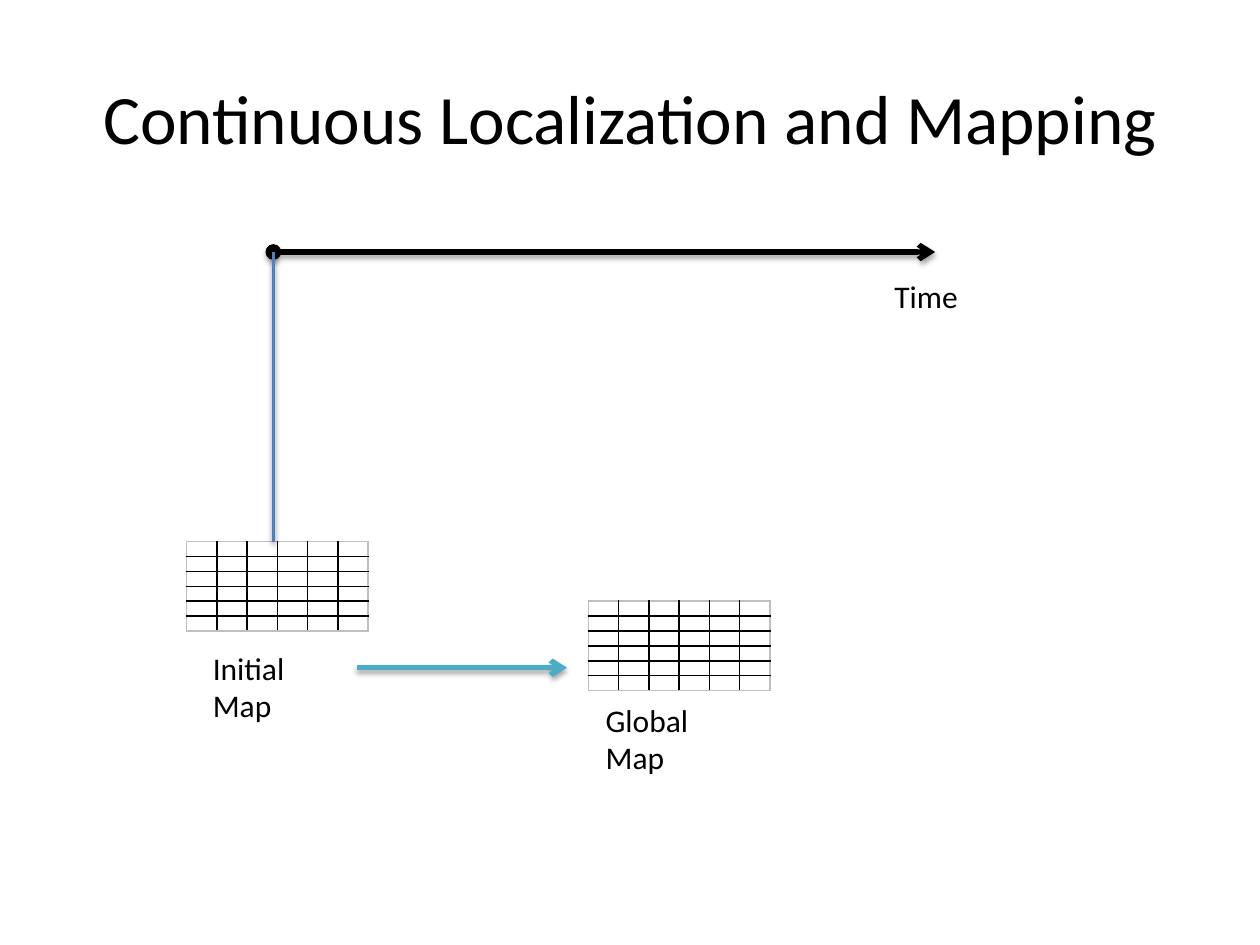
from dataclasses import dataclass
from itertools import product
from lxml.etree import SubElement
from pptx import Presentation
from pptx.dml.color import RGBColor
from pptx.enum.shapes import MSO_CONNECTOR as Connector
from pptx.enum.text import MSO_ANCHOR as Anchor, PP_ALIGN as Align
from pptx.oxml import parse_xml
from pptx.oxml.ns import nsdecls, qn
from pptx.util import Cm, Pt


@dataclass(frozen=True)
class Theme:
    font: str = "Calibri"
    title_size: float = 39.6
    label_size: float = 18
    cell_size: float = 1
    ink: str = "000000"
    grid_edge: str = "BFBFBF"
    blue: str = "4F81BD"
    teal: str = "4BACC6"


THEME = Theme()
TITLE = "Continuous Localization and Mapping"
LABELS = [
    ("Time", 17.78, 5.46, 1.85, False),
    ("Initial Map", 4.04, 12.95, 3.1, True),
    ("Global Map", 11.96, 14, 3.4, True),
]
MAP_GRIDS = [(3.76, 10.92), (11.86, 12.12)]
GRID_COUNT, CELL_WIDTH, CELL_HEIGHT = 6, 0.61, 0.3
TIMELINE = dict(start=(5.51, 5.08), end=(18.85, 5.08), color=THEME.ink,
                width=3, head="oval", tail="arrow")
START_MARK = dict(start=(5.51, 5.08), end=(5.51, 10.92), color=THEME.blue,
                  width=2, blur=3.1, distance=1.6, opacity=38)
MERGE_ARROW = dict(start=(7.19, 13.46), end=(11.43, 13.46), color=THEME.teal,
                   width=3, tail="arrow")


def add_text(slide, text, left, top, width, height, size, wrap=True):
    """Add a one-paragraph text box and return it."""
    shape = slide.shapes.add_textbox(Cm(left), Cm(top), Cm(width), Cm(height))
    shape.text_frame.word_wrap = wrap
    paragraph = shape.text_frame.paragraphs[0]
    paragraph.text = text
    paragraph.font.name = THEME.font
    paragraph.font.size = Pt(size)
    paragraph.font.color.rgb = RGBColor.from_string(THEME.ink)
    return shape


def add_line(slide, start, end, color, width, head=None, tail=None,
             blur=3.1, distance=1.8, opacity=35):
    """Add a straight line with optional ends and a soft shadow below."""
    points = [Cm(value) for value in (*start, *end)]
    connector = slide.shapes.add_connector(Connector.STRAIGHT, *points)
    connector.line.color.rgb = RGBColor.from_string(color)
    connector.line.width = Pt(width)
    outline = connector.line._get_or_add_ln()
    for tag, kind in (("a:headEnd", head), ("a:tailEnd", tail)):
        if kind:
            SubElement(outline, qn(tag), type=kind)
    connector._element.spPr.append(parse_xml(
        f'<a:effectLst {nsdecls("a")}>'
        f'<a:outerShdw blurRad="{Pt(blur)}" dist="{Pt(distance)}" '
        f'dir="5400000" rotWithShape="0"><a:srgbClr val="{THEME.ink}">'
        f'<a:alpha val="{opacity * 1000}"/></a:srgbClr>'
        f'</a:outerShdw></a:effectLst>'))


def set_borders(cell, row, column):
    """Draw black inner rules and a light outer edge."""
    last = GRID_COUNT - 1
    edges = {"a:lnL": column == 0, "a:lnR": column == last,
             "a:lnT": row == 0, "a:lnB": row == last}
    properties = cell._tc.get_or_add_tcPr()
    for tag, outer in edges.items():
        border = SubElement(properties, qn(tag), w=str(Pt(1)))
        fill = SubElement(border, qn("a:solidFill"))
        color = THEME.grid_edge if outer else THEME.ink
        SubElement(fill, qn("a:srgbClr"), val=color)


def add_map_grid(slide, left, top):
    """Add an empty square table standing for a map."""
    table = slide.shapes.add_table(
        GRID_COUNT, GRID_COUNT, Cm(left), Cm(top),
        Cm(GRID_COUNT * CELL_WIDTH), Cm(GRID_COUNT * CELL_HEIGHT)).table
    table.first_row = table.horz_banding = False
    for column in table.columns:
        column.width = Cm(CELL_WIDTH)
    for row in table.rows:
        row.height = Cm(CELL_HEIGHT)
    for row, column in product(range(GRID_COUNT), repeat=2):
        cell = table.cell(row, column)
        set_borders(cell, row, column)
        cell.fill.background()
        paragraph = cell.text_frame.paragraphs[0]
        SubElement(paragraph._p, qn("a:endParaRPr"),
                   sz=str(THEME.cell_size * 100))


def main():
    """Build and save the slide."""
    presentation = Presentation()
    presentation.slide_width, presentation.slide_height = Cm(25.4), Cm(19.05)
    slide = presentation.slides.add_slide(presentation.slide_layouts[6])
    title = add_text(slide, TITLE, 1.27, 0.76, 22.86, 3.18, THEME.title_size)
    title.text_frame.vertical_anchor = Anchor.MIDDLE
    title.text_frame.paragraphs[0].alignment = Align.CENTER
    for left, top in MAP_GRIDS:
        add_map_grid(slide, left, top)
    for line in (TIMELINE, START_MARK, MERGE_ARROW):
        add_line(slide, **line)
    for text, left, top, width, wrap in LABELS:
        add_text(slide, text, left, top, width, 1.02, THEME.label_size, wrap)
    presentation.save("out.pptx")


if __name__ == "__main__":
    main()
